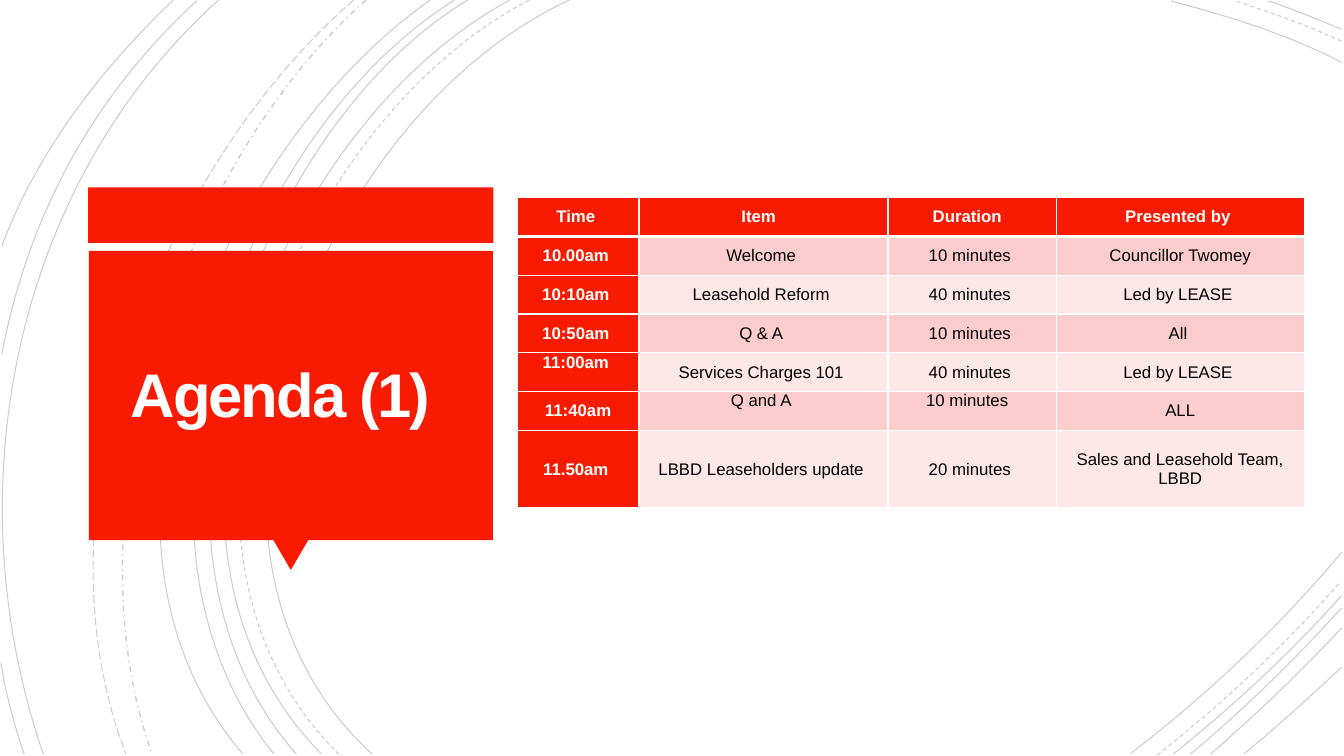
"""Build the first agenda slide: swept lines, a red title block and a timetable."""
from dataclasses import dataclass

from lxml import etree
from pptx import Presentation
from pptx.dml.color import RGBColor
from pptx.enum import dml, shapes, text
from pptx.oxml import ns
from pptx.slide import Slide
from pptx.table import _Cell
from pptx.util import Pt

Point = tuple[float, float]
DASH = dml.MSO_LINE


@dataclass(frozen=True)
class Theme:
    """Colours, font and type sizes."""
    red: str = "F81B02"
    white: str = "FFFFFF"
    title: str = "FFFEFF"
    black: str = "000000"
    bands: tuple[str, str] = ("FCCDCC", "FEE8E7")
    font: str = "Arial"
    head: float = 44
    body: float = 12


@dataclass(frozen=True)
class Curve:
    """A cubic curve with its line style."""
    start: Point
    pull: Point
    draw: Point
    end: Point
    dash: DASH = DASH.SOLID
    width: float = 0.75


@dataclass(frozen=True)
class Block:
    """A filled shape of the title block."""
    kind: shapes.MSO_SHAPE
    left: float
    top: float
    width: float
    height: float
    turn: float = 0


THEME = Theme()
CURVES = [
    Curve((406.8, 0), (226.8, 82.8), (103, 388.8), (265.7, 538.6)),
    Curve((958.3, 44.6), (920.2, 24.5), (877, 11.5), (836.6, 0.7)),
    Curve((807.1, 538.6), (861.8, 496.8), (913.7, 447.8), (958.3, 394.6)),
    Curve((378, 0), (205.2, 90), (88.6, 386.6), (241.9, 538.6), DASH.DASH),
    Curve((958.3, 29.5), (933.8, 18), (907.2, 8.6), (882, 0.7), DASH.DASH),
    Curve((826.6, 539.3), (873.4, 502.6), (918, 460.8), (957.6, 415.4), DASH.DASH),
    Curve((364.3, 0), (194.4, 91.4), (79.2, 386.6), (229.7, 538.6)),
    Curve((958.3, 20.9), (941, 13.7), (923.8, 6.5), (905.8, 0.7)),
    Curve((838.1, 538.6), (880.6, 504.7), (921.6, 466.6), (958.3, 425.5)),
    Curve((334.1, 0), (175.7, 95.8), (79.2, 389.5), (211.7, 538.6)),
    Curve((850.3, 538.6), (888.5, 506.9), (924.5, 471.6), (958.3, 434.2)),
    Curve((324.7, 0), (166.3, 99.4), (69.8, 383.8), (195.8, 538.6)),
    Curve((864.7, 538.6), (897.1, 510.5), (928.8, 480.2), (958.3, 448.6)),
    Curve((307.4, 0), (156.2, 105.8), (38.2, 380.9), (173.5, 538.6)),
    Curve((888.5, 538.6), (912.2, 519.1), (935.3, 498.2), (958.3, 476.6)),
    Curve((261.4, 0), (126.7, 119.5), (46.8, 366.5), (108.7, 538.6), DASH.DASH_DOT, 1),
    Curve((252.7, 0), (113, 121.7), (20.9, 359.3), (90, 538.6), DASH.LONG_DASH),
    Curve((156.2, 0), (7.9, 133.2), (-33.1, 352.8), (31, 538.6)),
    Curve((140.4, 0.7), (66.2, 69.1), (20.2, 154.1), (1.4, 252.7)),
    Curve((0.7, 473.8), (4.3, 496.1), (10.1, 517.7), (17.3, 538.6)),
    Curve((123.8, 0), (72, 49.7), (26.6, 108), (1.4, 175.7)),
]
BLOCKS = [
    Block(shapes.MSO_SHAPE.RECTANGLE, 63, 133.9, 289.4, 39.6),
    Block(shapes.MSO_SHAPE.ISOSCELES_TRIANGLE, 195.1, 385.5, 25.2, 21.6, 180),
    Block(shapes.MSO_SHAPE.RECTANGLE, 63.4, 179.3, 288.7, 206.6),
]
ROWS = [
    ("Time", "Item", "Duration", "Presented by"),
    ("10.00am", "Welcome", "10 minutes", "Councillor Twomey"),
    ("10:10am", "Leasehold Reform", "40 minutes", "Led by LEASE"),
    ("10:50am", "Q & A", "10 minutes", "All"),
    ("11:00am", "Services Charges 101", "40 minutes", "Led by LEASE"),
    ("11:40am", "Q and A", "10 minutes", "ALL"),
    ("11.50am", "LBBD Leaseholders update", "20 minutes", "Sales and Leasehold Team, LBBD"),
]
WIDTHS = (87.1, 177.8, 120.2, 177.1)
HEIGHTS = (27.75,) * 6 + (55.5,)
RAISED = {(4, 0), (5, 1), (5, 2)}
INSETS = {(0, 1): 7, (0, 2): 7, (5, 2): 7, (1, 3): 0, (5, 0): 0, (5, 3): 0, (6, 3): 0}


def rgb(code: str) -> RGBColor:
    """Turn a hex code into a colour."""
    return RGBColor.from_string(code)


def add_curve(slide: Slide, curve: Curve) -> None:
    """Draw one faint curve."""
    pen = slide.shapes.build_freeform(*map(Pt, curve.start))
    knots = (curve.pull, curve.draw, curve.end)
    pen.add_line_segments([tuple(map(Pt, knot)) for knot in knots], close=False)
    shape = pen.convert_to_shape()
    shape.shadow.inherit = False
    shape.fill.background()
    line = shape.line
    line.color.rgb = rgb(THEME.black)
    line.width = Pt(curve.width)
    line.dash_style = curve.dash
    props = shape._element.spPr
    track = props.find(".//" + ns.qn("a:path"))
    bend = etree.SubElement(track, ns.qn("a:cubicBezTo"))
    for step in track.findall(ns.qn("a:lnTo")):
        bend.append(step[0])
        track.remove(step)
    tint = props.find(ns.qn("a:ln")).find(".//" + ns.qn("a:srgbClr"))
    etree.SubElement(tint, ns.qn("a:alpha"), val="20000")


def add_block(slide: Slide, block: Block) -> None:
    """Draw one red shape."""
    box = (Pt(v) for v in (block.left, block.top, block.width, block.height))
    shape = slide.shapes.add_shape(block.kind, *box)
    shape.rotation = block.turn
    shape.shadow.inherit = False
    shape.fill.solid()
    shape.fill.fore_color.rgb = rgb(THEME.red)
    shape.line.fill.background()


def set_title(slide: Slide) -> None:
    """Place the title on top of the red block."""
    title = slide.shapes.title
    title.left, title.top, title.width, title.height = map(Pt, (69.8, 184.3, 275.8, 194.4))
    slide.shapes._spTree.append(title._element)
    frame = title.text_frame
    frame.text = "Agenda (1)"
    frame.word_wrap = True
    frame.auto_size = text.MSO_AUTO_SIZE.NONE
    frame.vertical_anchor = text.MSO_ANCHOR.MIDDLE
    frame.margin_left, frame.margin_top = Pt(7.2), Pt(5.3)
    frame.margin_right, frame.margin_bottom = Pt(21.6), Pt(7.2)
    line = frame.paragraphs[0]
    line.alignment = text.PP_ALIGN.CENTER
    line.line_spacing = 1.0
    font = line.runs[0].font
    font.name, font.size, font.bold = THEME.font, Pt(THEME.head), True
    font.color.rgb = rgb(THEME.title)
    font._element.set("spc", "-150")


def set_edge(cell: _Cell, side: str, width: float) -> None:
    """Give one side of a cell a white border."""
    props = cell._tc.get_or_add_tcPr()
    edge = etree.SubElement(props, ns.qn("a:ln" + side), w=str(Pt(width)))
    fill = etree.SubElement(edge, ns.qn("a:solidFill"))
    etree.SubElement(fill, ns.qn("a:srgbClr"), val=THEME.white)


def set_cell(cell: _Cell, words: str, row: int, col: int) -> None:
    """Fill and format one cell."""
    strong = row == 0 or col == 0
    thick = {(0, "B"), (1, "T")}
    for side in "LRTB":
        set_edge(cell, side, 3 if (row, side) in thick else 1)
    cell.fill.solid()
    cell.fill.fore_color.rgb = rgb(THEME.red if strong else THEME.bands[(row - 1) % 2])
    cell.margin_left = cell.margin_top = cell.margin_bottom = Pt(0)
    cell.margin_right = Pt(INSETS.get((row, col), 3.3))
    raised = (row, col) in RAISED
    cell.vertical_anchor = text.MSO_ANCHOR.TOP if raised else text.MSO_ANCHOR.MIDDLE
    cell.text = words
    line = cell.text_frame.paragraphs[0]
    line.alignment = text.PP_ALIGN.CENTER
    font = line.font
    font.name, font.size, font.bold = THEME.font, Pt(THEME.body), strong
    font.color.rgb = rgb(THEME.white if strong else THEME.black)


def add_times(slide: Slide) -> None:
    """Draw the timetable."""
    box = (Pt(v) for v in (369.4, 141.1, sum(WIDTHS), sum(HEIGHTS)))
    table = slide.shapes.add_table(len(ROWS), len(WIDTHS), *box).table
    table.first_col = True
    for column, width in zip(table.columns, WIDTHS):
        column.width = Pt(width)
    for r, (height, words) in enumerate(zip(HEIGHTS, ROWS)):
        table.rows[r].height = Pt(height)
        for c, word in enumerate(words):
            set_cell(table.cell(r, c), word, r, c)


def main() -> None:
    """Build and save the slide."""
    deck = Presentation()
    deck.slide_width, deck.slide_height = Pt(960), Pt(540)
    slide = deck.slides.add_slide(deck.slide_layouts[5])
    for curve in CURVES:
        add_curve(slide, curve)
    for block in BLOCKS:
        add_block(slide, block)
    set_title(slide)
    add_times(slide)
    deck.save("out.pptx")


if __name__ == "__main__":
    main()
